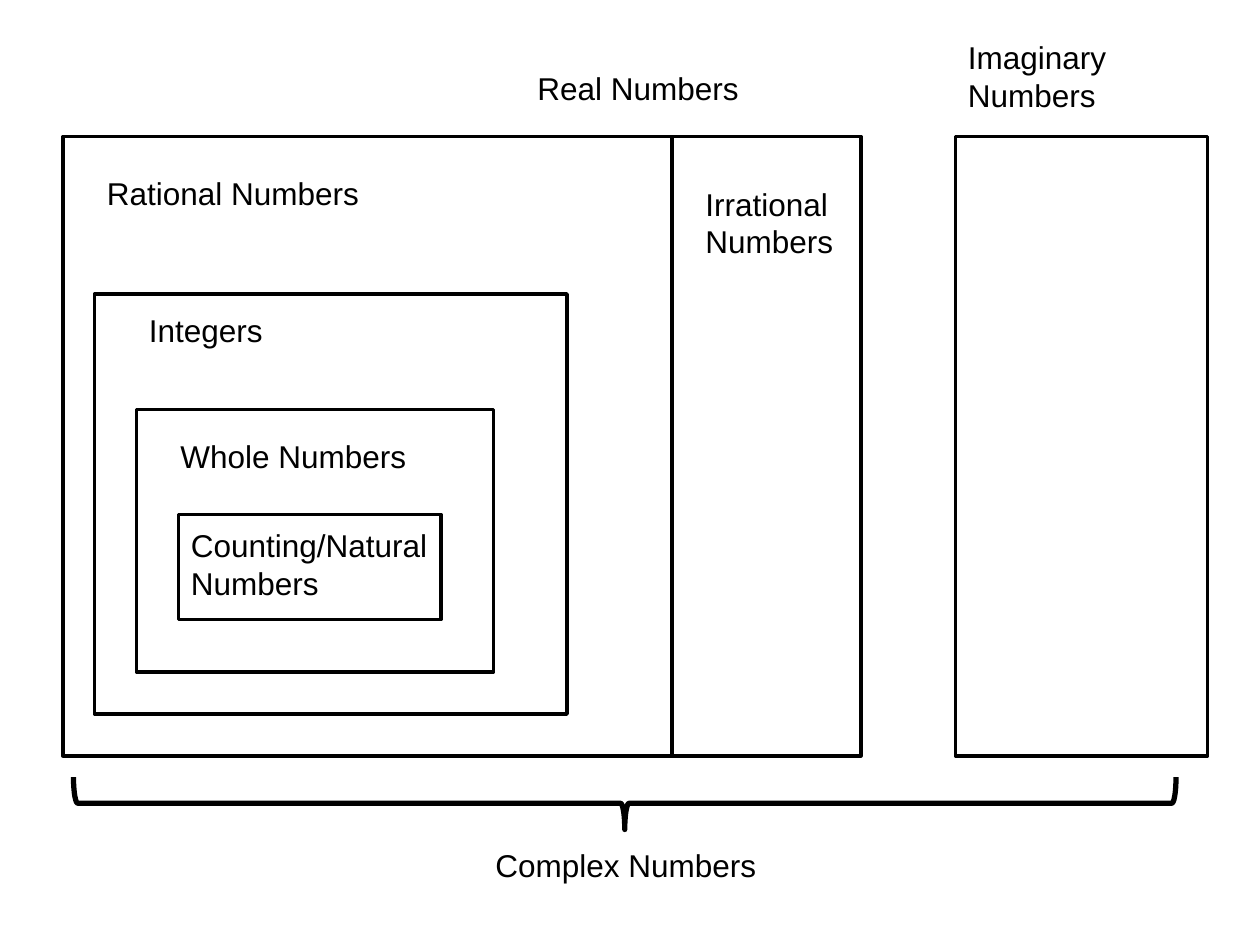
from pptx import Presentation
from pptx.dml.color import RGBColor
from pptx.enum.shapes import MSO_SHAPE as Kind
from pptx.enum.text import MSO_AUTO_SIZE as Fit
from pptx.util import Inches, Pt

BLACK = RGBColor(0, 0, 0)
UNIT = Inches(1) // 12

SETS = [
    (6, 13, 58, 59),
    (64, 13, 18, 59),
    (91, 13, 24, 59),
    (9, 28, 45, 40),
    (13, 39, 34, 25),
    (17, 49, 25, 10),
]
LABELS = [
    ("Real Numbers", 50, 6, 23, 1),
    ("Imaginary Numbers", 91, 3, 22, 2),
    ("Counting/Natural Numbers", 17, 49.5, 25, 2),
    ("Whole Numbers", 16, 41, 28, 1),
    ("Integers", 13, 29, 36, 1),
    ("Rational Numbers", 9, 16, 46, 1),
    ("Irrational Numbers", 66, 17, 15, 2),
    ("Complex Numbers", 46, 80, 28, 1),
]
HIGH = {1: 4.8, 2: 8.5}


def grid(*cells):
    return [int(cell * UNIT) for cell in cells]


def outline(slide, kind, cells, width):
    shape = slide.shapes.add_shape(kind, *grid(*cells))
    shape.shadow.inherit = False
    shape.fill.background()
    shape.line.color.rgb = BLACK
    shape.line.width = Pt(width)
    return shape


def brace(slide):
    shape = outline(slide, Kind.LEFT_BRACE, (57, 24, 5, 105), 3)
    shape.rotation = 270
    shape.adjustments[0] = 0.08
    shape.adjustments[1] = 0.5


def label(slide, text, col, row, wide, lines):
    box = slide.shapes.add_textbox(*grid(col, row, wide, HIGH[lines]))
    frame = box.text_frame
    frame.word_wrap = True
    frame.auto_size = Fit.SHAPE_TO_FIT_TEXT
    frame.text = text
    font = frame.paragraphs[0].font
    font.name = "Arial"
    font.size = Pt(18)
    font.color.rgb = BLACK


def main():
    deck = Presentation()
    deck.slide_width = Inches(10)
    deck.slide_height = Inches(7.5)
    slide = deck.slides.add_slide(deck.slide_layouts[6])
    for cells in SETS:
        outline(slide, Kind.RECTANGLE, cells, 2)
    brace(slide)
    for item in LABELS:
        label(slide, *item)
    deck.save("out.pptx")


if __name__ == "__main__":
    main()
